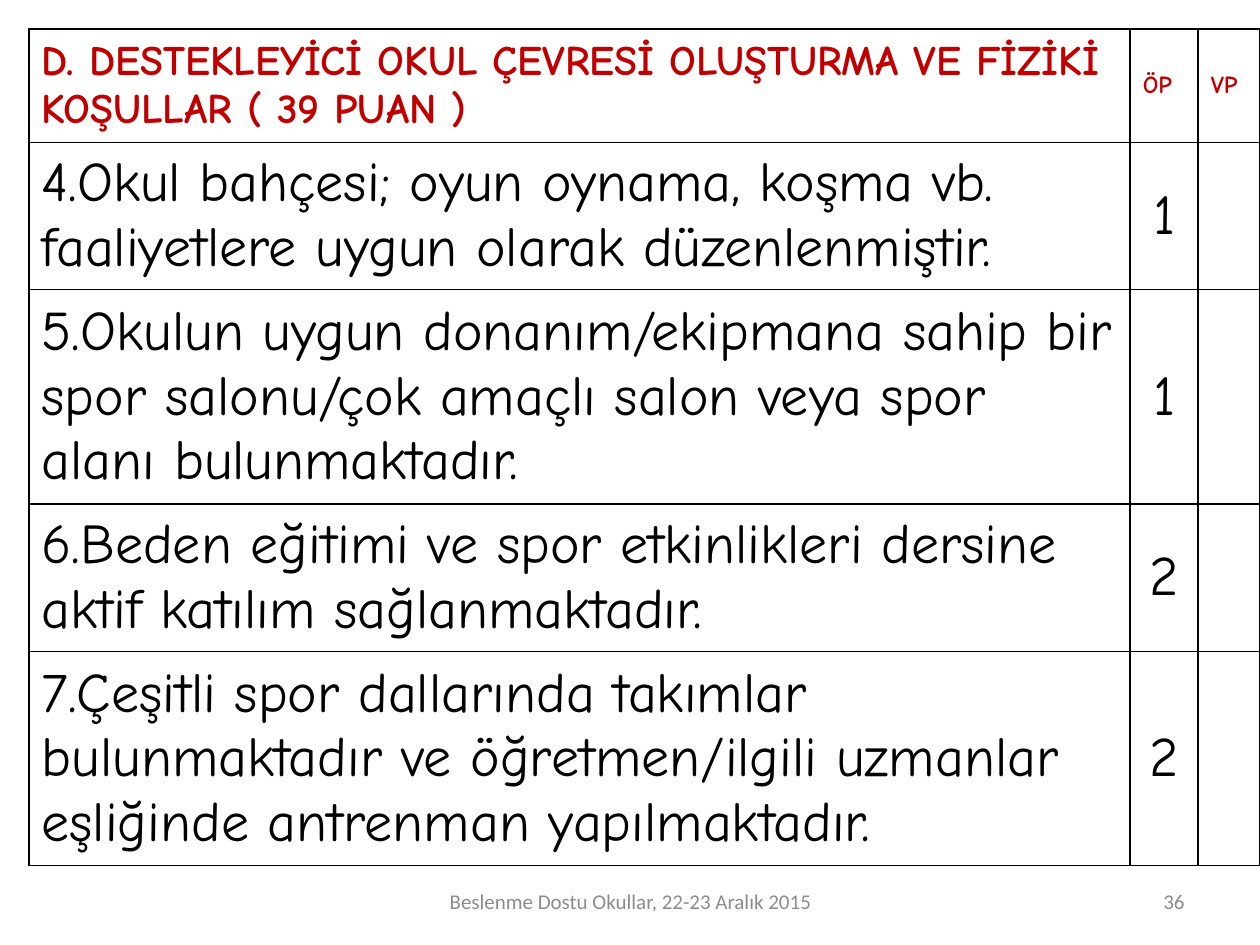
from lxml import etree
from pptx import Presentation
from pptx.dml.color import RGBColor
from pptx.enum import text
from pptx.oxml import ns
from pptx.util import Inches, Pt

BLACK = RGBColor(0x00, 0x00, 0x00)
RED = RGBColor(0xC0, 0x00, 0x00)
GRAY = RGBColor(0x8C, 0x8C, 0x8C)
LEFT, CENTER, RIGHT = text.PP_ALIGN.LEFT, text.PP_ALIGN.CENTER, text.PP_ALIGN.RIGHT

COLUMN_WIDTHS = [8.74, 0.54, 0.49]
ROW_HEIGHTS = [0.9, 1.17, 1.7, 1.17, 1.7]
HEADERS = [
    ("D. DESTEKLEYİCİ OKUL ÇEVRESİ OLUŞTURMA VE FİZİKİ KOŞULLAR ( 39 PUAN )", 24),
    ("ÖP", 14),
    ("VP", 14),
]
CRITERIA = [
    ("4.Okul bahçesi; oyun oynama, koşma vb. faaliyetlere uygun olarak düzenlenmiştir.", "1"),
    ("5.Okulun uygun donanım/ekipmana sahip bir spor salonu/çok amaçlı salon veya spor alanı bulunmaktadır.", "1"),
    ("6.Beden eğitimi ve spor etkinlikleri dersine aktif katılım sağlanmaktadır.", "2"),
    ("7.Çeşitli spor dallarında takımlar bulunmaktadır ve öğretmen/ilgili uzmanlar eşliğinde antrenman yapılmaktadır.", "2"),
]


def write_text(text_frame, words, font_name, size, color, bold=False, alignment=LEFT):
    text_frame.text = words
    paragraph = text_frame.paragraphs[0]
    paragraph.alignment = alignment
    for run in paragraph.runs:
        run.font.name = font_name
        run.font.size = Pt(size)
        run.font.color.rgb = color
        run.font.bold = bold


def add_borders(cell):
    properties = cell._tc.get_or_add_tcPr()
    for position, side in enumerate(("lnL", "lnR", "lnT", "lnB")):
        line = etree.Element(ns.qn(f"a:{side}"), w=str(Pt(1)))
        fill = etree.SubElement(line, ns.qn("a:solidFill"))
        etree.SubElement(fill, ns.qn("a:srgbClr"), val=str(BLACK))
        properties.insert(position, line)


def add_criteria_table(slide):
    frame = slide.shapes.add_table(
        len(ROW_HEIGHTS), len(COLUMN_WIDTHS), Inches(0.23), Inches(0.23),
        Inches(sum(COLUMN_WIDTHS)), Inches(sum(ROW_HEIGHTS)))
    table = frame.table
    table.first_row = False
    table.horz_banding = False
    for column, width in zip(table.columns, COLUMN_WIDTHS):
        column.width = Inches(width)
    for row, height in zip(table.rows, ROW_HEIGHTS):
        row.height = Inches(height)
    for cell in table.iter_cells():
        cell.fill.background()
        cell.vertical_anchor = text.MSO_ANCHOR.MIDDLE
        add_borders(cell)
    for column, (words, size) in enumerate(HEADERS):
        write_text(table.cell(0, column).text_frame, words, "Comic Neue", size, RED, bold=True)
    for row, (criterion, points) in enumerate(CRITERIA, start=1):
        write_text(table.cell(row, 0).text_frame, criterion, "Comic Neue", 32, BLACK)
        write_text(table.cell(row, 1).text_frame, points, "Comic Neue", 32, BLACK, alignment=CENTER)


def add_footer_text(slide, words, left, width, alignment):
    shape = slide.shapes.add_textbox(Inches(left), Inches(6.95), Inches(width), Inches(0.4))
    shape.text_frame.word_wrap = True
    shape.text_frame.vertical_anchor = text.MSO_ANCHOR.MIDDLE
    write_text(shape.text_frame, words, "Calibri", 12, GRAY, alignment=alignment)


def main():
    presentation = Presentation()
    presentation.slide_width = Inches(10)
    presentation.slide_height = Inches(7.5)
    slide = presentation.slides.add_slide(presentation.slide_layouts[6])
    add_criteria_table(slide)
    add_footer_text(slide, "Beslenme Dostu Okullar, 22-23 Aralık 2015", 3.42, 3.17, CENTER)
    add_footer_text(slide, "36", 7.17, 2.33, RIGHT)
    presentation.save("out.pptx")


if __name__ == "__main__":
    main()
